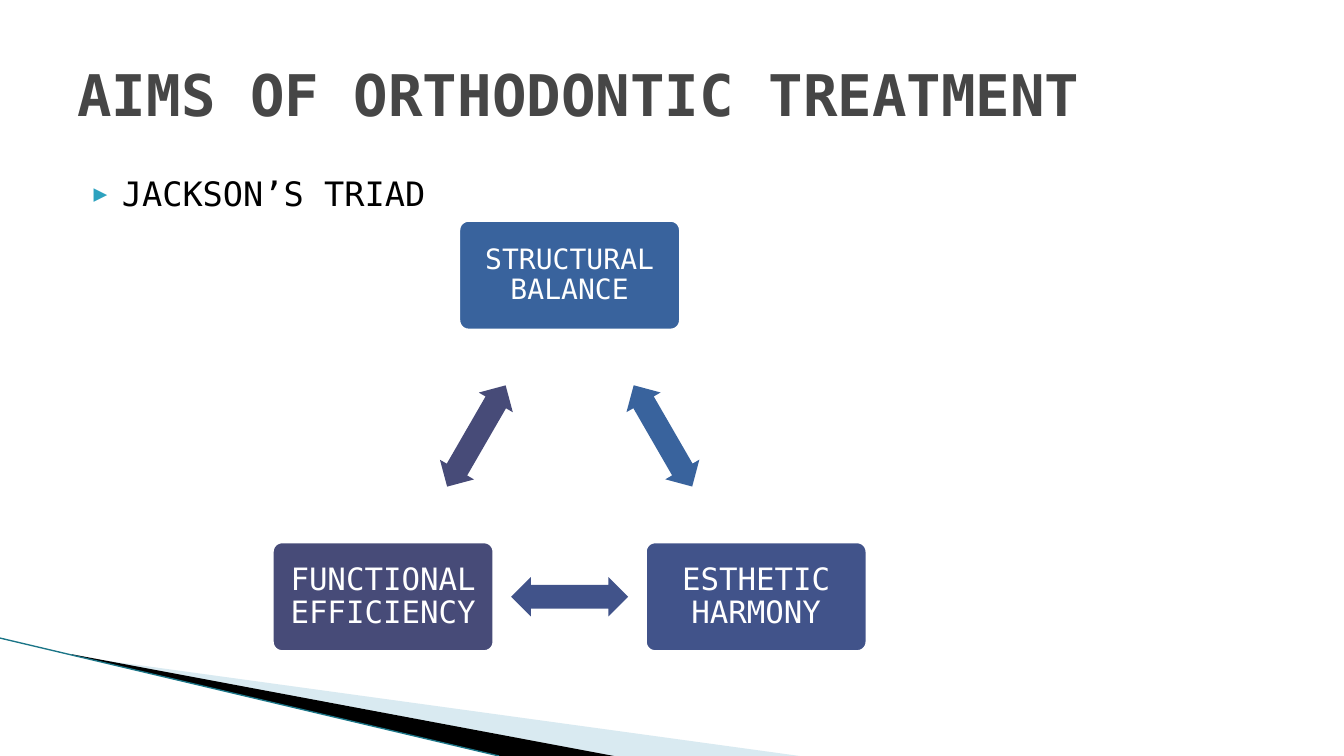
from lxml.etree import SubElement
from pptx import Presentation
from pptx.dml.color import RGBColor
from pptx.enum.shapes import MSO_CONNECTOR, MSO_SHAPE
from pptx.enum.text import MSO_ANCHOR, PP_ALIGN
from pptx.oxml.ns import qn
from pptx.util import Inches, Pt

FONT = "DejaVu Sans Mono"
TITLE = ("AIMS OF ORTHODONTIC TREATMENT", {"size": Pt(41), "bold": True}, "464646")
BULLET = ("JACKSON’S TRIAD", {"size": Pt(24)}, "000000")
# Clockwise from the top: text, text size, inset, fill, centre
TRIAD = [
    ("STRUCTURAL BALANCE", 20, 0.11, "39639D", (5.65, 2.73)),
    ("ESTHETIC HARMONY", 22, 0.12, "41538A", (7.5, 5.92)),
    ("FUNCTIONAL EFFICIENCY", 22, 0.12, "474B78", (3.8, 5.92)),
]
BOX_SIZE = (2.23, 1.12)
ARROW_SIZE = (1.16, 0.39)
WEDGES = [
    ("A0CBDC", 40, [(0.73, 6.51), (7.93, 7.5), (6.08, 7.5), (0.73, 6.5)]),
    ("000000", 100, [(0.71, 6.49), (6.09, 7.5), (4.96, 7.5), (0.72, 6.5)]),
]
EDGE = ("1B7587", (0, 6.33), (4.95, 7.5))


def color(value):
    return RGBColor.from_string(value)


def paint(shape, fill):
    shape.shadow.inherit = False
    shape.fill.solid()
    shape.fill.fore_color.rgb = color(fill)
    shape.line.fill.background()


def write(para, text, values, ink):
    span = para.add_run()
    span.text = text
    span.font.color.rgb = color(ink)
    for name, value in {"name": FONT, **values}.items():
        setattr(span.font, name, value)


def add_text(page, place, anchor):
    box = page.shapes.add_textbox(*map(Inches, place))
    box.text_frame.word_wrap = True
    box.text_frame.vertical_anchor = anchor
    return box.text_frame.paragraphs[0]


def add_bullet(para):
    properties = para._p.get_or_add_pPr()
    properties.set("marL", str(Inches(0.4)))
    properties.set("indent", str(Inches(-0.28)))
    tint = SubElement(properties, qn("a:buClr"))
    SubElement(tint, qn("a:srgbClr"), val="2DA2BF")
    SubElement(properties, qn("a:buSzPct"), val="68000")
    SubElement(properties, qn("a:buFont"), typeface=FONT)
    SubElement(properties, qn("a:buChar"), char="▶")


def add_centred(page, kind, centre, size, fill):
    """Add a preset shape around its centre point."""
    corner = [middle - length / 2 for middle, length in zip(centre, size)]
    shape = page.shapes.add_shape(kind, *map(Inches, (*corner, *size)))
    paint(shape, fill)
    return shape


def add_wedge(page, fill, opacity, points):
    corners = [(Inches(x), Inches(y)) for x, y in points]
    builder = page.shapes.build_freeform(*corners[0])
    builder.add_line_segments(corners[1:], close=True)
    wedge = builder.convert_to_shape()
    paint(wedge, fill)
    if opacity < 100:
        tint = wedge.fill._xPr.find(qn("a:solidFill"))[0]
        SubElement(tint, qn("a:alpha"), val=str(opacity * 1000))


def add_edge(page, ink, start, end):
    edge = page.shapes.add_connector(MSO_CONNECTOR.STRAIGHT, *map(Inches, (*start, *end)))
    edge.line.color.rgb = color(ink)
    edge.line.width = Pt(0.95)
    SubElement(edge._element.spPr, qn("a:effectLst"))


def add_triad_box(page, text, size, inset, fill, centre):
    box = add_centred(page, MSO_SHAPE.ROUNDED_RECTANGLE, centre, BOX_SIZE, fill)
    box.adjustments[0] = 0.1
    box.line.color.rgb = color("FFFFFF")
    box.line.width = Pt(4.33)
    frame = box.text_frame
    frame.word_wrap = True
    frame.vertical_anchor = MSO_ANCHOR.MIDDLE
    for side in ("left", "top", "right", "bottom"):
        setattr(frame, f"margin_{side}", Inches(inset))
    para = frame.paragraphs[0]
    para.alignment = PP_ALIGN.CENTER
    para.line_spacing = 0.9
    write(para, text, {"size": Pt(size)}, "FFFFFF")


def add_triad(page):
    """Draw the boxes, and halfway between neighbours an arrow along that side."""
    for index, (text, size, inset, fill, centre) in enumerate(TRIAD):
        add_triad_box(page, text, size, inset, fill, centre)
        following = TRIAD[(index + 1) % len(TRIAD)][-1]
        halfway = [(a + b) / 2 for a, b in zip(centre, following)]
        arrow = add_centred(page, MSO_SHAPE.LEFT_RIGHT_ARROW, halfway, ARROW_SIZE, fill)
        arrow.adjustments[0] = 0.6
        arrow.adjustments[1] = 0.5
        arrow.rotation = 60 + 120 * index


def main():
    deck = Presentation()
    deck.slide_width, deck.slide_height = Inches(13.33), Inches(7.5)
    page = deck.slides.add_slide(deck.slide_layouts[6])
    for wedge in WEDGES:
        add_wedge(page, *wedge)
    add_edge(page, *EDGE)
    bullet = add_text(page, (0.71, 1.67, 9.69, 4.56), MSO_ANCHOR.TOP)
    add_bullet(bullet)
    write(bullet, *BULLET)
    write(add_text(page, (0.67, 0.3, 12, 1.25), MSO_ANCHOR.MIDDLE), *TITLE)
    add_triad(page)
    deck.save("out.pptx")


if __name__ == "__main__":
    main()
